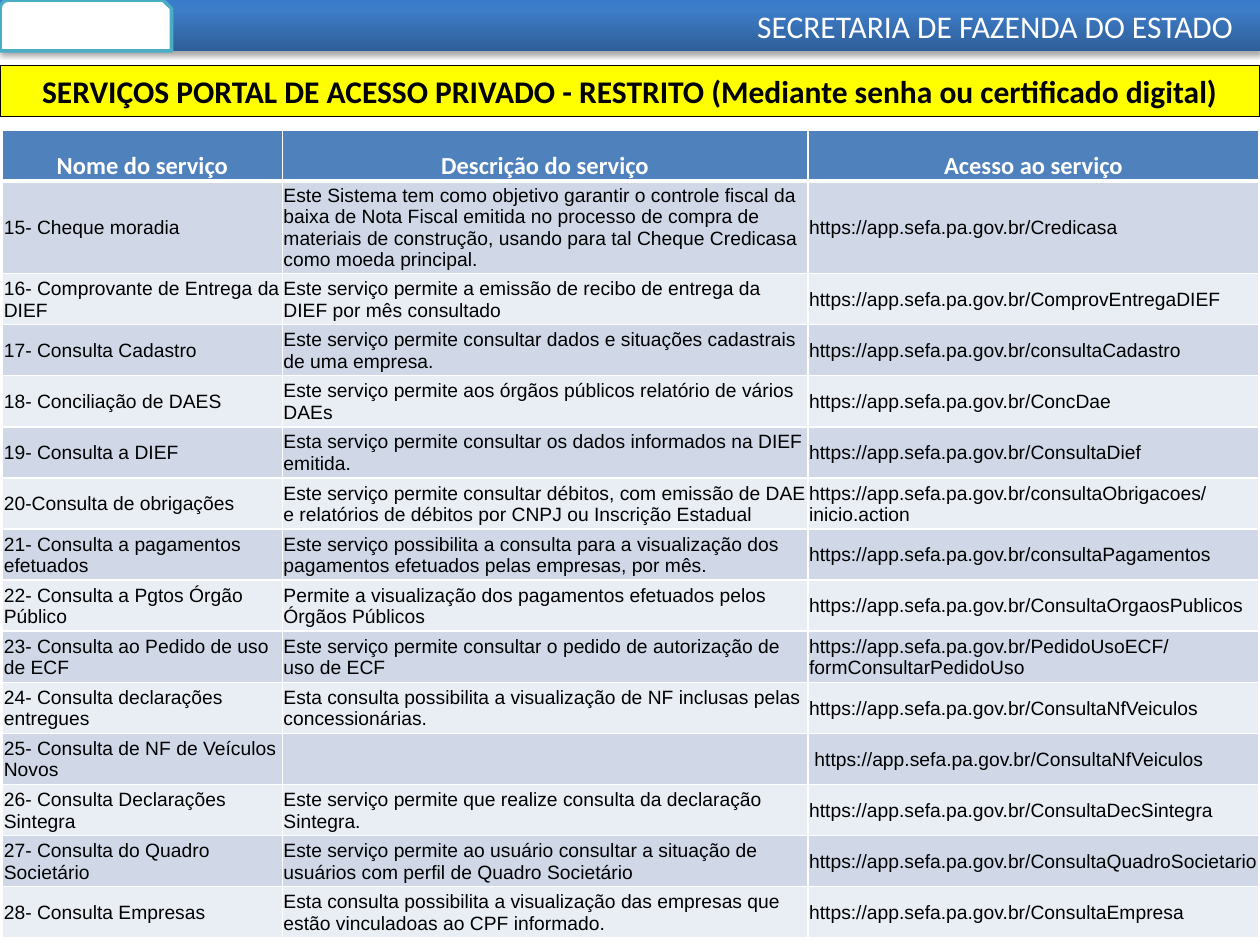
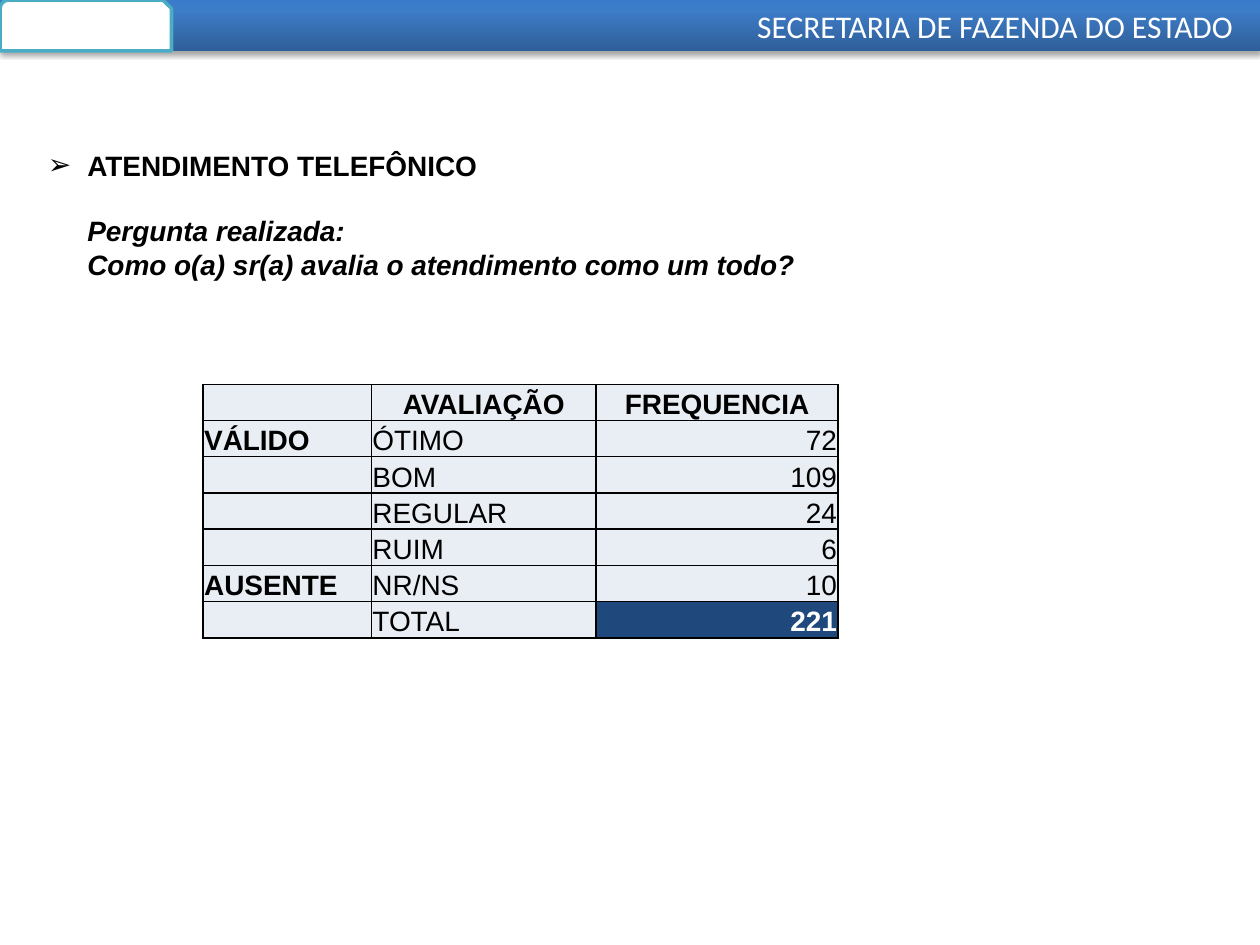
"""Builds two slides: restricted portal services and phone service ratings."""
from lxml import etree
from pptx import Presentation, oxml
from pptx.dml.color import RGBColor
from pptx.enum import shapes, text
from pptx.oxml import ns
from pptx.util import Pt


class Theme:
    white, black, yellow = "FFFFFF", "000000", "FFFF00"
    blue, navy, teal = "4F81BD", "1F497D", "4BACC6"
    dark, light = "D0D8E8", "E9EDF4"
    fade = ((0, "2F5F99"), (80, "3D7CC7"), (100, "3A7CCB"))
    head, body = "Calibri", "Arial"
    big, mid, sub, small = 18, 16, 14, 11


left, mid, right = text.PP_ALIGN.LEFT, text.PP_ALIGN.CENTER, text.PP_ALIGN.RIGHT
low, core = text.MSO_ANCHOR.BOTTOM, text.MSO_ANCHOR.MIDDLE
xml_ns = ns.nsdecls("a")


def style(para, face, size, color, bold=False, align=left, slant=False):
    para.alignment = align
    for run in para.runs:
        font = run.font
        font.name, font.size, font.bold, font.italic = face, Pt(size), bold, slant
        font.color.rgb = RGBColor.from_string(color)


def fill_cell(cell, words, back, edge, widths, anchor, face, size, color, bold, align):
    cell.text_frame.text = words
    cell.vertical_anchor = anchor
    cell.margin_left = cell.margin_right = cell.margin_top = Pt(0.7)
    cell.margin_bottom = 0
    cell.fill.solid()
    cell.fill.fore_color.rgb = RGBColor.from_string(back)
    para = cell.text_frame.paragraphs[0]
    style(para, face, size, color, bold, align)
    end = etree.SubElement(para._p, ns.qn("a:endParaRPr"))
    end.set("sz", str(size * 100))
    props = cell._tc.get_or_add_tcPr()
    for i, (side, width) in enumerate(zip("LRTB", widths)):
        props.insert(i, oxml.parse_xml(
            f'<a:ln{side} {xml_ns} w="{Pt(width)}"><a:solidFill>'
            f'<a:srgbClr val="{edge}"/></a:solidFill></a:ln{side}>'))


deck = Presentation()
deck.slide_width, deck.slide_height = Pt(720), Pt(540)
pages = [deck.slides.add_slide(deck.slide_layouts[5]) for _ in range(2)]

for page in pages:
    band = page.shapes.add_shape(shapes.MSO_SHAPE.RECTANGLE, 0, 0, Pt(720), Pt(29.1))
    band.line.fill.background()
    stops = "".join(f'<a:gs pos="{pos * 1000}"><a:srgbClr val="{tone}"/></a:gs>'
                    for pos, tone in Theme.fade)
    props = band._element.spPr
    props.insert(2, oxml.parse_xml(
        f'<a:gradFill {xml_ns} rotWithShape="1"><a:gsLst>{stops}</a:gsLst>'
        '<a:lin ang="16200000" scaled="0"/></a:gradFill>'))
    props.append(oxml.parse_xml(
        f'<a:effectLst {xml_ns}><a:outerShdw blurRad="{Pt(3.1)}" dist="{Pt(1.8)}" '
        f'dir="5400000" rotWithShape="0"><a:srgbClr val="{Theme.black}">'
        '<a:alpha val="35000"/></a:srgbClr></a:outerShdw></a:effectLst>'))
    frame = band.text_frame
    frame.text = "SECRETARIA DE FAZENDA DO ESTADO"
    frame.margin_right = Pt(15.4)
    style(frame.paragraphs[0], Theme.head, Theme.big, Theme.white, align=right)

    tab = page.shapes.add_shape(shapes.MSO_SHAPE.SNIP_ROUND_RECTANGLE, 0, 0, Pt(98), Pt(29.1))
    tab.shadow.inherit = False
    tab.fill.solid()
    tab.fill.fore_color.rgb = RGBColor.from_string(Theme.white)
    tab.line.color.rgb = RGBColor.from_string(Theme.teal)
    tab.line.width = Pt(2)

title = pages[0].shapes.title
title.left, title.top, title.width, title.height = 0, Pt(37.4), Pt(720), Pt(29.1)
title.fill.solid()
title.fill.fore_color.rgb = RGBColor.from_string(Theme.yellow)
title.line.color.rgb = RGBColor.from_string(Theme.black)
title.line.width = Pt(0.75)
frame = title.text_frame
frame.text = "SERVIÇOS PORTAL DE ACESSO PRIVADO - RESTRITO (Mediante senha ou certificado digital)"
frame.auto_size, frame.vertical_anchor = text.MSO_AUTO_SIZE.NONE, core
style(frame.paragraphs[0], Theme.head, Theme.big, Theme.black, True, mid)

site = "https://app.sefa.pa.gov.br/"
items = [
    ("15- Cheque moradia",
     "Este Sistema tem como objetivo garantir o controle fiscal da baixa de Nota Fiscal emitida "
     "no processo de compra de materiais de construção, usando para tal Cheque Credicasa como "
     "moeda principal.", site + "Credicasa"),
    ("16- Comprovante de Entrega da DIEF",
     "Este serviço permite a emissão de recibo de entrega da DIEF por mês consultado",
     site + "ComprovEntregaDIEF"),
    ("17- Consulta Cadastro",
     "Este serviço permite consultar dados e situações cadastrais de uma empresa.",
     site + "consultaCadastro"),
    ("18- Conciliação de DAES",
     "Este serviço permite aos órgãos públicos relatório de vários DAEs", site + "ConcDae"),
    ("19- Consulta a DIEF",
     "Esta serviço permite consultar os dados informados na DIEF emitida.",
     site + "ConsultaDief"),
    ("20-Consulta de obrigações",
     "Este serviço permite consultar débitos, com emissão de DAE e relatórios de débitos por "
     "CNPJ ou Inscrição Estadual", site + "consultaObrigacoes/inicio.action"),
    ("21- Consulta a pagamentos efetuados",
     "Este serviço possibilita a consulta para a visualização dos pagamentos efetuados pelas "
     "empresas, por mês.", site + "consultaPagamentos"),
    ("22- Consulta a Pgtos Órgão Público",
     "Permite a visualização dos pagamentos efetuados pelos Órgãos Públicos",
     site + "ConsultaOrgaosPublicos"),
    ("23- Consulta ao Pedido de uso de ECF",
     "Este serviço permite consultar o pedido de autorização de uso de ECF",
     site + "PedidoUsoECF/formConsultarPedidoUso"),
    ("24- Consulta declarações entregues",
     "Esta consulta possibilita a visualização de NF inclusas pelas concessionárias.",
     site + "ConsultaNfVeiculos"),
    ("25- Consulta de NF de Veículos Novos", "", " " + site + "ConsultaNfVeiculos"),
    ("26- Consulta Declarações Sintegra",
     "Este serviço permite que realize consulta da declaração Sintegra.",
     site + "ConsultaDecSintegra"),
    ("27- Consulta do Quadro Societário",
     "Este serviço permite ao usuário consultar a situação de usuários com perfil de Quadro "
     "Societário", site + "ConsultaQuadroSocietario"),
    ("28- Consulta Empresas",
     "Esta consulta possibilita a visualização das empresas que estão vinculadoas ao CPF "
     "informado.", site + "ConsultaEmpresa"),
]
rows = [("Nome do serviço", "Descrição do serviço", "Acesso ao serviço")] + items
grid = pages[0].shapes.add_table(len(rows), 3, Pt(1.5), Pt(74.2), Pt(718), Pt(462)).table
for col, width in zip(grid.columns, (159.8, 300.4, 257.8)):
    col.width = Pt(width)
for r, row in enumerate(rows):
    grid.rows[r].height = Pt(52.9 if r == 1 else 29.2)
    for c, words in enumerate(row):
        cell = grid.cell(r, c)
        if r == 0:
            fill_cell(cell, words, Theme.blue, Theme.white, (1, 1, 1, 3), low,
                      Theme.head, Theme.sub, Theme.white, True, mid)
        else:
            fill_cell(cell, words, Theme.dark if r % 2 else Theme.light, Theme.white,
                      (1, 1, 3 if r == 1 else 1, 1), core,
                      Theme.body, Theme.small, Theme.black, False, left)

title = pages[1].shapes.title
title.left, title.top, title.width, title.height = Pt(20.2), Pt(66.2), Pt(648), Pt(113)
frame = title.text_frame
frame.text = ("ATENDIMENTO TELEFÔNICO\n"
              "Pergunta realizada:\vComo o(a) sr(a) avalia o atendimento como um todo?")
frame.auto_size, frame.vertical_anchor = text.MSO_AUTO_SIZE.NONE, core
topic, ask = frame.paragraphs
for para, hang in ((topic, -22.5), (ask, 0)):
    props = para._p.get_or_add_pPr()
    props.set("marL", str(Pt(22.5)))
    props.set("indent", str(Pt(hang)))
etree.SubElement(topic._p.pPr, ns.qn("a:buFont")).set("typeface", Theme.body)
etree.SubElement(topic._p.pPr, ns.qn("a:buChar")).set("char", "➢")
style(topic, Theme.body, Theme.mid, Theme.black, True)
style(ask, Theme.body, Theme.mid, Theme.black, True, slant=True)
ask.space_before = Pt(18.4)

rows = [
    ("", "AVALIAÇÃO", "FREQUENCIA"),
    ("VÁLIDO", "ÓTIMO", "72"),
    ("", "BOM", "109"),
    ("", "REGULAR", "24"),
    ("", "RUIM", "6"),
    ("AUSENTE", "NR/NS", "10"),
    ("", "TOTAL", "221"),
]
grid = pages[1].shapes.add_table(len(rows), 3, Pt(116), Pt(219.6), Pt(363), Pt(144.9)).table
for col, width in zip(grid.columns, (96.2, 128.5, 138.3)):
    col.width = Pt(width)
for r, row in enumerate(rows):
    grid.rows[r].height = Pt(20.7)
    for c, words in enumerate(row):
        total = r == len(rows) - 1 and c == 2
        align = mid if r == 0 else right if c == 2 else left
        fill_cell(grid.cell(r, c), words, Theme.navy if total else Theme.light, Theme.black,
                  (1, 1, 1, 1), low, Theme.body, Theme.mid,
                  Theme.white if total else Theme.black, r == 0 or c == 0 or total, align)

deck.save("out.pptx")
